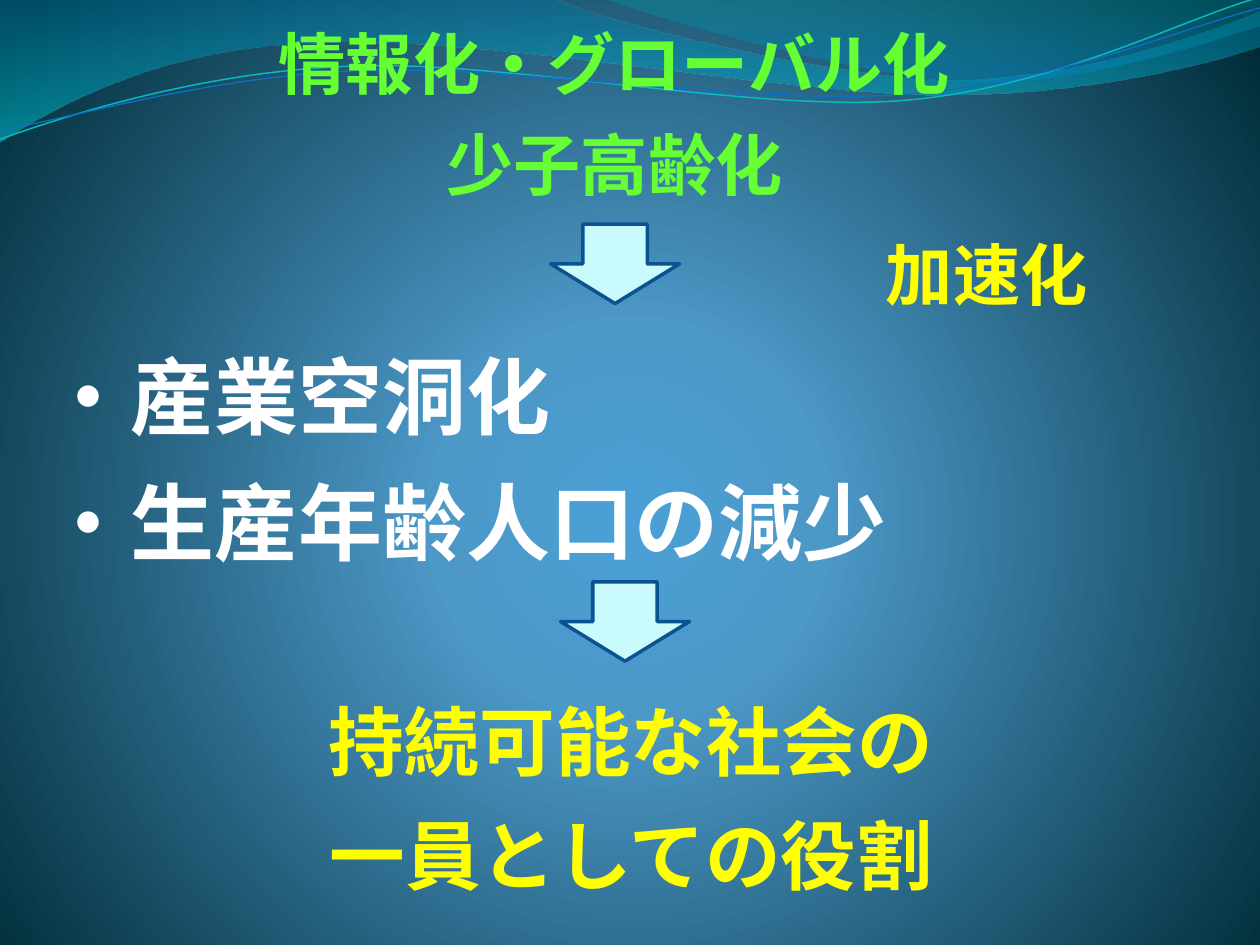
from dataclasses import dataclass

import lxml.etree
import pptx
import pptx.dml.color
import pptx.enum.shapes
import pptx.enum.text
import pptx.oxml.ns
import pptx.util

Cm, Pt = pptx.util.Cm, pptx.util.Pt
qn = pptx.oxml.ns.qn
Align = pptx.enum.text.PP_ALIGN
Anchor = pptx.enum.text.MSO_ANCHOR


@dataclass(frozen=True)
class Theme:
    font: str = "Noto Sans CJK JP"
    green: str = "66FF33"
    yellow: str = "FFFF00"
    white: str = "FFFFFF"
    arrow_fill: str = "C9FAFC"
    arrow_line: str = "0B5292"
    heading: int = 48
    conclusion: int = 54
    body: int = 60
    line_height: float = 1.2
    # Gradient stops: position %, colour, opacity %
    backdrop: tuple = ((0, "4AA0D6", 100), (25, "4C98C7", 100), (100, "002C38", 100))
    left_wave: tuple = ((0, "0074A1", 45), (100, "00C6CF", 55))
    right_wave: tuple = ((0, "00A1A9", 30), (80, "008BBF", 45))


THEME = Theme()


@dataclass(frozen=True)
class Wave:
    """Outline in cm: a step of one point is a line, of three a Bézier curve."""
    start: tuple
    steps: tuple
    stops: tuple = ()
    line: str = ""
    width: float = 0
    rotation: float = 0


@dataclass(frozen=True)
class Caption:
    left: float
    top: float
    width: float
    height: float
    text: str
    size: int
    color: str
    align: Align = Align.CENTER
    anchor: Anchor = Anchor.BOTTOM


WAVES = (
    Wave((0, 0), (
        ((11.18, -0.03),),
        ((12.09, 0.43), (16.87, 1.6), (19.25, 1.6)),
        ((21.67, 1.6), (24.33, 0.66), (25.4, 0.23)),
        ((25.43, 0.91),),
        ((24.97, 1.12), (22.1, 1.93), (18.95, 1.91)),
        ((15.8, 1.91), (9.7, 0.71), (6.53, 0.86)),
        ((3.28, 0.91), (1.17, 2.11), (-0.03, 2.87)),
        ((0, 0),),
    ), stops=THEME.left_wave),
    Wave((12.17, -0.03), (
        ((12.93, 0.28), (17.32, 1.57), (19.53, 1.65)),
        ((21.74, 1.75), (24.41, 0.81), (25.4, 0.53)),
        ((25.4, 0),),
        ((12.17, -0.03),),
    ), stops=THEME.right_wave),
    Wave((-0.05, 2.21), (
        ((1.19, 1.83), (4.01, 1.04), (7.06, 1.07)),
        ((10.06, 1.07), (15.01, 2.36), (18.08, 2.29)),
        ((21.13, 2.21), (23.88, 0.91), (25.4, 0.56)),
    ), line="0AB8BF", width=0.85, rotation=-2.7),
    Wave((-0.05, 2.03), (
        ((1.17, 1.9), (4.17, 1.14), (7.19, 1.17)),
        ((10.24, 1.17), (15.14, 2.25), (18.19, 2.16)),
        ((21.21, 2.11), (23.93, 1.07), (25.45, 0.76)),
    ), line="0F6FC6", width=0.75, rotation=-2.7),
)

HEADING = Caption(0.69, 0.91, 23.39, 3.4, "情報化・グローバル化\n少子高齢化",
                  THEME.heading, THEME.green)
ISSUES = Caption(0.69, 6.32, 24.71, 5.41, "・産業空洞化\n・生産年齢人口の減少",
                 THEME.body, THEME.white, Align.LEFT)
SPEED = Caption(15.09, 4.72, 9.6, 1.8, "加速化", THEME.heading, THEME.yellow)
CONCLUSION = Caption(2.11, 13.51, 21.21, 4.88, "持続可能な社会の\n一員としての役割",
                     THEME.conclusion, THEME.yellow, anchor=Anchor.TOP)


def rgb(color: str) -> pptx.dml.color.RGBColor:
    return pptx.dml.color.RGBColor.from_string(color)


def fill_gradient(fill, owner, stops: tuple, circle: bool = False) -> None:
    """Give a fill its stops, running downwards or out from the centre."""
    fill.gradient()
    gradient = next(owner.iter(qn("a:gradFill")))
    for child in list(gradient):
        gradient.remove(child)
    stop_list = lxml.etree.SubElement(gradient, qn("a:gsLst"))
    for position, color, opacity in stops:
        stop = lxml.etree.SubElement(stop_list, qn("a:gs"), pos=str(position * 1000))
        tint = lxml.etree.SubElement(stop, qn("a:srgbClr"), val=color)
        if opacity < 100:
            lxml.etree.SubElement(tint, qn("a:alpha"), val=str(opacity * 1000))
    if circle:
        path = lxml.etree.SubElement(gradient, qn("a:path"), path="circle")
        lxml.etree.SubElement(path, qn("a:fillToRect"),
                              l="10000", t="110000", r="10000", b="100000")
    else:
        lxml.etree.SubElement(gradient, qn("a:lin"), ang="5400000", scaled="0")


def bend(shape, steps: tuple) -> None:
    """Join the segments of each three-point step into one Bézier curve."""
    segments = iter(list(shape.element.iter(qn("a:lnTo"))))
    for step in steps:
        group = [next(segments) for _ in step]
        if len(group) == 3:
            curve = lxml.etree.Element(qn("a:cubicBezTo"))
            group[0].addprevious(curve)
            for segment in group:
                curve.append(segment[0])
                segment.getparent().remove(segment)


def draw_wave(page, wave: Wave) -> None:
    first, *rest = [(round(x * 1000), round(y * 1000))
                    for x, y in (wave.start, *(p for step in wave.steps for p in step))]
    builder = page.shapes.build_freeform(*first, scale=Cm(1) / 1000)
    builder.add_line_segments(rest, close=bool(wave.stops))
    shape = builder.convert_to_shape()
    bend(shape, wave.steps)
    shape.rotation = wave.rotation
    shape.shadow.inherit = False
    if wave.stops:
        fill_gradient(shape.fill, shape.element, wave.stops)
        shape.line.fill.background()
    else:
        shape.fill.background()
        shape.line.color.rgb = rgb(wave.line)
        shape.line.width = Pt(wave.width)


def draw_caption(page, caption: Caption) -> None:
    box = page.shapes.add_textbox(Cm(caption.left), Cm(caption.top),
                                  Cm(caption.width), Cm(caption.height))
    frame = box.text_frame
    frame.word_wrap = True
    frame.vertical_anchor = caption.anchor
    frame.text = caption.text
    for para in frame.paragraphs:
        para.alignment = caption.align
        para.line_spacing = Pt(caption.size * THEME.line_height)
        for span in para.runs:
            span.font.size = Pt(caption.size)
            span.font.bold = True
            span.font.color.rgb = rgb(caption.color)
            span.font.name = THEME.font
    # Small capitals and the East Asian typeface
    for properties in box.element.iter(qn("a:rPr")):
        properties.set("cap", "small")
        lxml.etree.SubElement(properties, qn("a:ea"), typeface=THEME.font)


def draw_arrow(page, left: float, top: float) -> None:
    arrow = page.shapes.add_shape(pptx.enum.shapes.MSO_SHAPE.DOWN_ARROW,
                                  Cm(left), Cm(top), Cm(2.6), Cm(1.6))
    arrow.shadow.inherit = False
    arrow.fill.solid()
    arrow.fill.fore_color.rgb = rgb(THEME.arrow_fill)
    arrow.line.color.rgb = rgb(THEME.arrow_line)
    arrow.line.width = Pt(2)


def main() -> None:
    deck = pptx.Presentation()
    deck.slide_width, deck.slide_height = Cm(25.4), Cm(19.05)
    page = deck.slides.add_slide(deck.slide_layouts[6])

    # Backdrop
    fill_gradient(page.background.fill, page.element, THEME.backdrop, circle=True)
    for wave in WAVES:
        draw_wave(page, wave)

    # Statements and the arrows between them
    draw_caption(page, HEADING)
    draw_caption(page, ISSUES)
    draw_arrow(page, 11.1, 4.52)
    draw_caption(page, SPEED)
    draw_arrow(page, 11.3, 11.73)
    draw_caption(page, CONCLUSION)

    deck.save("out.pptx")


if __name__ == "__main__":
    main()
